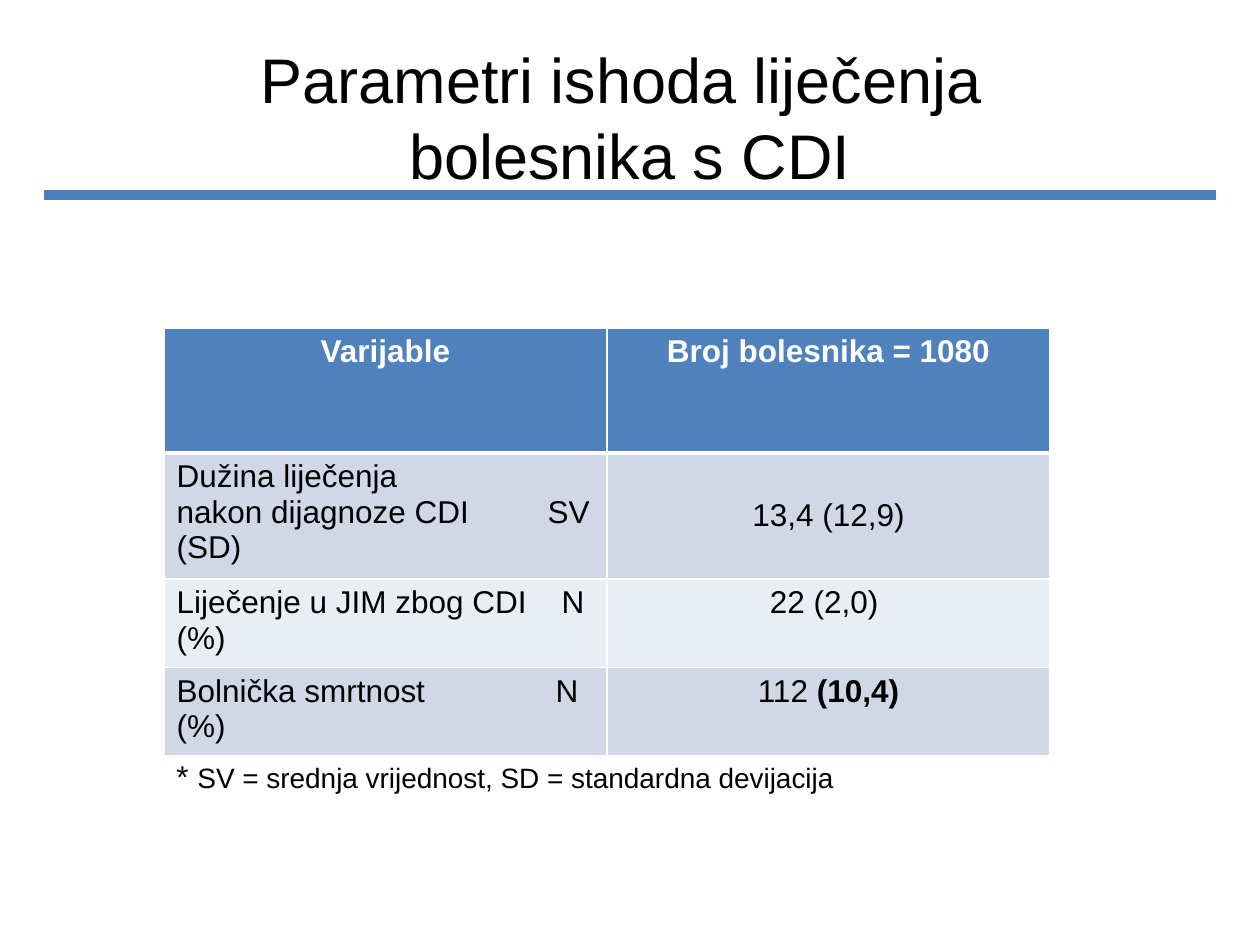
import pptx
import pptx.util
import pptx.dml.color
import pptx.enum.shapes
import pptx.enum.text
import pptx.oxml
import pptx.oxml.ns
from lxml import etree

COLORS = {
    "rule": "4B7EBC",
    "header": "4F81BD",
    "band_dark": "D0D8E8",
    "band_light": "E9EDF4",
    "white": "FFFFFF",
    "black": "000000",
}
FONT = "Arial"
TITLE = "Parametri ishoda liječenja \vbolesnika s CDI"
HEADINGS = ["Varijable", "Broj bolesnika = 1080"]
OUTCOMES = [
    (["Dužina liječenja", "nakon dijagnoze CDI\tSV (SD)"], 371, [("13,4 (12,9)", False)]),
    (["Liječenje u JIM zbog CDI\tN (%)"], 385, [("22 (2,0) ", False)]),
    (["Bolnička smrtnost\tN (%)"], 379, [("112 ", False), ("(10,4)", True)]),
]
FOOTNOTE = [("* ", 18), ("SV = srednja vrijednost, SD = standardna devijacija", 16)]

TITLE_BOX = (63, 38, 1134, 157)
RULE = (44, 195, 1216, 195)
TABLE_LEFT, TABLE_TOP, COLUMN_WIDTH = 164, 328, 443
ROW_HEIGHTS = [125, 126, 83, 83]
FOOTNOTE_BOX = (164, 751, 886, 50)

CENTER = pptx.enum.text.PP_ALIGN.CENTER
MIDDLE = pptx.enum.text.MSO_ANCHOR.MIDDLE
qn = pptx.oxml.ns.qn


def px(length):
    return pptx.util.Emu(round(length * 914400 / 126))


def rgb(name):
    return pptx.dml.color.RGBColor.from_string(COLORS[name])


def style(run, size, color="black", bold=False):
    run.font.name = FONT
    run.font.size = pptx.util.Pt(size)
    run.font.bold = bold
    run.font.color.rgb = rgb(color)


def add_text(slide, box):
    frame = slide.shapes.add_textbox(*map(px, box)).text_frame
    frame.word_wrap = True
    return frame


def set_borders(cell, bottom_width):
    properties = cell._tc.get_or_add_tcPr()
    for side, width in (("lnL", 1), ("lnR", 1), ("lnT", 1), ("lnB", bottom_width)):
        border = etree.SubElement(properties, qn(f"a:{side}"), w=str(pptx.util.Pt(width)))
        fill = etree.SubElement(border, qn("a:solidFill"))
        etree.SubElement(fill, qn("a:srgbClr"), val=COLORS["white"])


def set_tab(paragraph, position):
    stops = etree.SubElement(paragraph._p.get_or_add_pPr(), qn("a:tabLst"))
    etree.SubElement(stops, qn("a:tab"), pos=str(px(position)), algn="l")


def fill_cell(cell, paragraphs, background, color="black", bottom_width=1, align=None, tab=None):
    set_borders(cell, bottom_width)
    cell.fill.solid()
    cell.fill.fore_color.rgb = rgb(background)
    frame = cell.text_frame
    for index, runs in enumerate(paragraphs):
        paragraph = frame.add_paragraph() if index else frame.paragraphs[0]
        paragraph.alignment = align
        if tab:
            set_tab(paragraph, tab)
        for text, bold in runs:
            run = paragraph.add_run()
            run.text = text
            style(run, 18, color, bold)


def add_outcome_table(slide):
    table = slide.shapes.add_table(
        len(ROW_HEIGHTS), len(HEADINGS), px(TABLE_LEFT), px(TABLE_TOP),
        px(COLUMN_WIDTH * len(HEADINGS)), px(sum(ROW_HEIGHTS))).table
    for column in table.columns:
        column.width = px(COLUMN_WIDTH)
    for row, height in zip(table.rows, ROW_HEIGHTS):
        row.height = px(height)
    for column, heading in enumerate(HEADINGS):
        fill_cell(table.cell(0, column), [[(heading, True)]], "header", "white", 3, CENTER)
    for row, (variable, tab, value) in enumerate(OUTCOMES, start=1):
        band = "band_dark" if row % 2 else "band_light"
        fill_cell(table.cell(row, 0), [[(line, False)] for line in variable], band, tab=tab)
        fill_cell(table.cell(row, 1), [value], band, align=CENTER)
    table.cell(1, 1).vertical_anchor = MIDDLE


def main():
    presentation = pptx.Presentation()
    presentation.slide_width, presentation.slide_height = px(1260), px(945)
    slide = presentation.slides.add_slide(presentation.slide_layouts[6])

    rule = slide.shapes.add_connector(pptx.enum.shapes.MSO_CONNECTOR.STRAIGHT, *map(px, RULE))
    rule.line.color.rgb = rgb("rule")
    rule.line.width = pptx.util.Pt(6)
    etree.SubElement(rule._element.spPr, qn("a:effectLst"))

    title = add_text(slide, TITLE_BOX)
    title.vertical_anchor = MIDDLE
    title.text = TITLE
    title.paragraphs[0].alignment = CENTER
    for run in title.paragraphs[0].runs:
        style(run, 36)

    add_outcome_table(slide)

    footnote = add_text(slide, FOOTNOTE_BOX).paragraphs[0]
    for text, size in FOOTNOTE:
        run = footnote.add_run()
        run.text = text
        style(run, size)

    presentation.save("out.pptx")


if __name__ == "__main__":
    main()
